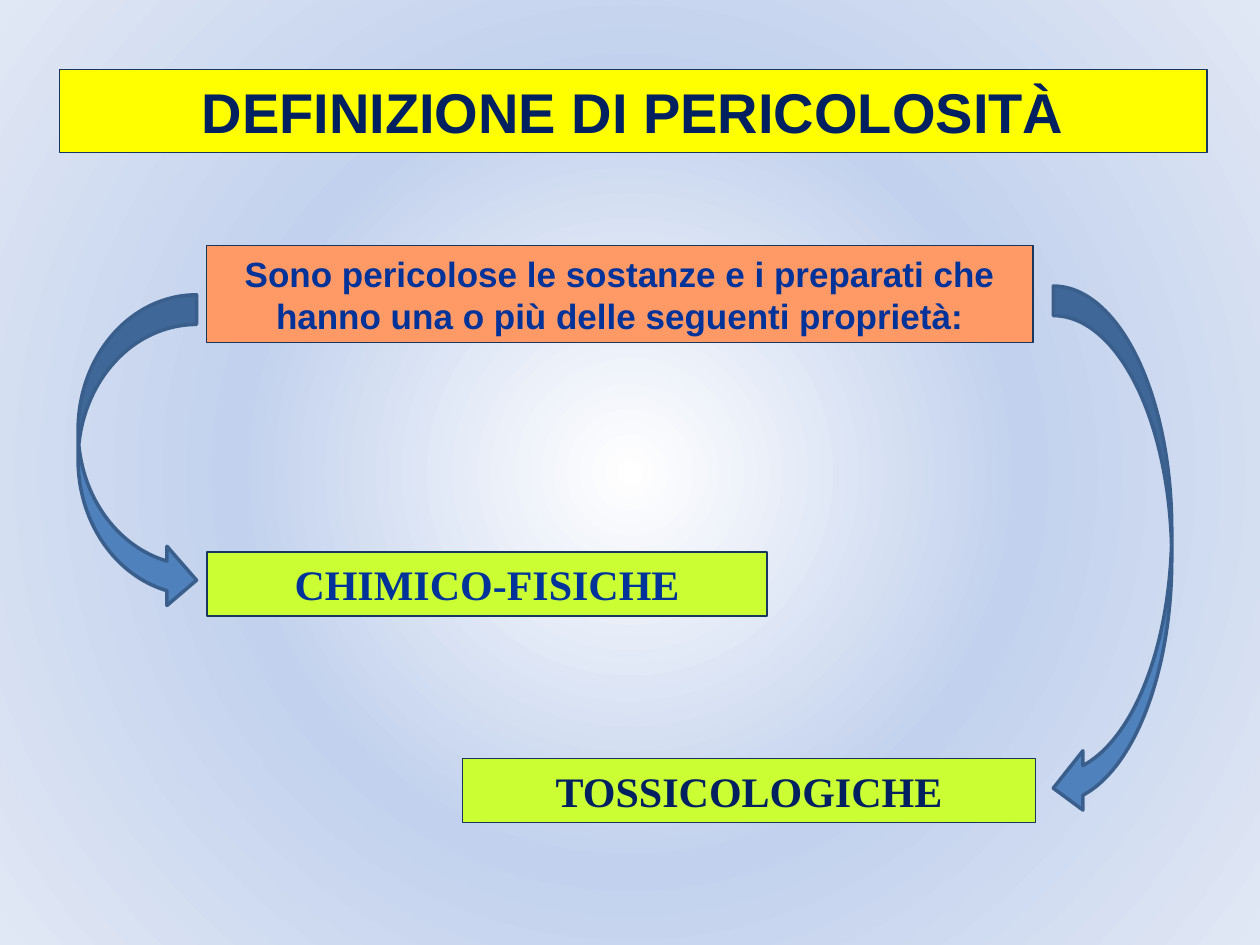
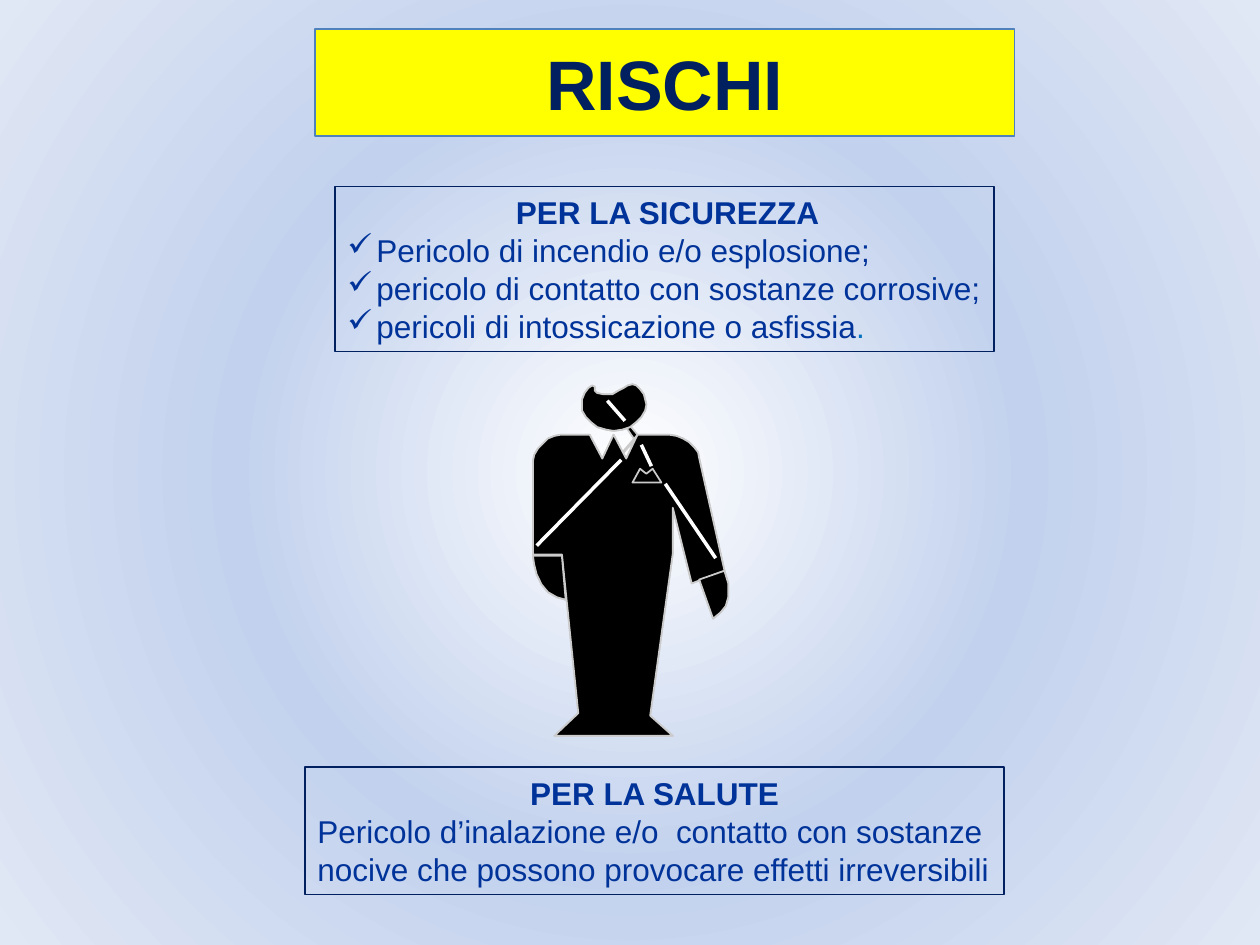
from dataclasses import dataclass
from typing import Any

from lxml import etree
from pptx import Presentation, util as u
from pptx.dml import color
from pptx.enum import shapes, text
from pptx.oxml import ns, parse_xml

PX = 9144  # EMU in one px, 100 px to the inch

COLOURS = {
    "white": "FFFFFF",
    "black": "000000",
    "mid_sky": "C2D1ED",
    "pale_sky": "E1E8F5",
    "yellow": "FFFF00",
    "orange": "FF9966",
    "lime": "CCFF33",
    "navy": "002060",
    "royal": "003399",
    "bright": "0070C0",
    "border": "17375E",
    "accent": "4F81BD",
    "arrow_edge": "3A5F8C",
    "grey": "CBCBCB",
}
BACKDROP = [(0, "white"), (50, "mid_sky"), (100, "pale_sky")]
BULLET_INDENT = 23
CENTRE, LEFT = text.PP_ALIGN.CENTER, text.PP_ALIGN.LEFT
RECTANGLE = shapes.MSO_SHAPE.RECTANGLE

Point = tuple[int, int]


@dataclass(frozen=True)
class Span:
    words: str
    colour: str = "royal"
    bold: bool = False


@dataclass(frozen=True)
class Para:
    spans: list[Span]
    align: Any = LEFT
    bullet: str = ""


@dataclass(frozen=True)
class Panel:
    area: tuple[int, int, int, int]
    paras: list[Para]
    size: int
    fill: str | None = None
    line: str = "border"
    weight: float = 0.75
    font: str = "Arial"
    right_inset: int = 10


@dataclass(frozen=True)
class Arrow:
    preset: Any
    area: tuple[int, int, int, int]


def heading(words: str, colour: str = "royal") -> Para:
    return Para([Span(words, colour, True)], CENTRE)


def title(words: str, area: tuple[int, int, int, int], size: int, line: str) -> Panel:
    return Panel(area, [heading(words, "navy")], size, "yellow", line)


# Slide 1: definition of hazard
DEFINITION = [
    title("DEFINIZIONE DI PERICOLOSITÀ", (47, 55, 911, 66), 32, "border"),
    Panel((164, 195, 656, 77), [heading(
        "Sono pericolose le sostanze e i preparati che hanno una o più "
        "delle seguenti proprietà:")], 20, "orange"),
    Panel((164, 438, 445, 51), [heading("CHIMICO-FISICHE")], 24, "lime",
          weight=1, font="Times New Roman"),
    Panel((367, 602, 455, 51), [heading("TOSSICOLOGICHE", "navy")], 24, "lime",
          font="Times New Roman"),
]
ARROWS = [
    Arrow(shapes.MSO_SHAPE.CURVED_RIGHT_ARROW, (62, 234, 94, 250)),
    Arrow(shapes.MSO_SHAPE.CURVED_LEFT_ARROW, (836, 227, 94, 422)),
]

# Slide 2: risks
RISKS = [
    title("RISCHI", (250, 23, 555, 85), 40, "accent"),
    Panel((266, 148, 523, 131), [
        heading("PER LA SICUREZZA"),
        Para([Span("Pericolo di incendio e/o esplosione;")], bullet="✓"),
        Para([Span("pericolo di contatto con sostanze corrosive;")], bullet="✓"),
        Para([Span("pericoli di intossicazione o asfissia"), Span(".", "bright")],
             bullet="✓"),
    ], 18, line="navy", weight=1, right_inset=5),
    Panel((242, 609, 555, 101), [
        heading("PER LA SALUTE"),
        Para([Span("Pericolo d’inalazione e/o  contatto con sostanze nocive "
                   "che possono provocare effetti irreversibili")]),
    ], 18, line="navy", weight=1),
]

# Parts of the human figure
HEAD: list[Point] = [
    (479, 313), (486, 313), (491, 310), (495, 308), (498, 306), (502, 305),
    (505, 306), (508, 309), (511, 313), (512, 317), (513, 321), (512, 326),
    (509, 331), (505, 335), (500, 339), (494, 341), (487, 342), (481, 341),
    (474, 339), (469, 335), (465, 331), (462, 326), (462, 317), (464, 312),
    (467, 308), (470, 306), (472, 307), (472, 310), (474, 312),
]
SUIT: list[Point] = [
    (506, 345), (497, 364), (487, 345), (478, 364), (468, 345), (445, 345),
    (440, 346), (435, 348), (431, 352), (427, 356), (424, 361), (423, 366),
    (423, 440), (446, 440), (459, 566), (440, 584), (534, 584), (516, 568),
    (534, 439), (534, 403), (549, 463), (575, 453), (555, 364), (554, 359),
    (551, 355), (547, 351), (542, 348), (537, 346), (531, 345),
]
LEFT_HAND: list[Point] = [
    (423, 441), (446, 441), (449, 476), (442, 474), (435, 470), (430, 464),
    (426, 456), (424, 448),
]
RIGHT_HAND: list[Point] = [
    (575, 453), (555, 460), (566, 491), (572, 486), (576, 481), (578, 474),
    (578, 463),
]
POCKET: list[Point] = [(525, 383), (518, 372), (513, 376), (508, 372), (502, 383)]
SILHOUETTE = (HEAD + HEAD[:1] + SUIT + SUIT[:1] + LEFT_HAND + LEFT_HAND[:1]
              + [(504, 349)] + RIGHT_HAND + RIGHT_HAND[:1])
CREASES: list[tuple[Point, Point]] = [
    ((493, 365), (426, 433)),
    ((528, 384), (568, 443)),
    ((482, 318), (496, 334)),
    ((509, 353), (517, 370)),
]


def assign(target: Any, values: dict[str, Any]) -> None:
    for name, value in values.items():
        setattr(target, name, value)


def rgb(name: str) -> color.RGBColor:
    return color.RGBColor.from_string(COLOURS[name])


def px(*lengths: int) -> list[int]:
    return [length * PX for length in lengths]


def paint(box: Any, fill: str | None, line: str, weight: float) -> None:
    box.shadow.inherit = False
    if fill:
        box.fill.solid()
        box.fill.fore_color.rgb = rgb(fill)
    else:
        box.fill.background()
    box.line.color.rgb = rgb(line)
    box.line.width = u.Pt(weight)


def add_page(deck: Any) -> Any:
    page = deck.slides.add_slide(deck.slide_layouts[6])
    # Radial backdrop
    page.background.fill.solid()
    solid = next(page.element.iter(ns.qn("a:solidFill")))
    stops = "".join(
        f'<a:gs pos="{share * 1000}"><a:srgbClr val="{COLOURS[name]}"/></a:gs>'
        for share, name in BACKDROP)
    solid.getparent().replace(solid, parse_xml(
        f'<a:gradFill {ns.nsdecls("a")} rotWithShape="1"><a:gsLst>{stops}</a:gsLst>'
        '<a:path path="circle"><a:fillToRect l="50000" t="50000" r="50000" '
        'b="50000"/></a:path></a:gradFill>'))
    return page


def set_bullet(para: Any, symbol: str) -> None:
    layout = para._p.get_or_add_pPr()
    layout.set("marL", str(BULLET_INDENT * PX))
    layout.set("indent", str(-BULLET_INDENT * PX))
    etree.SubElement(layout, ns.qn("a:buChar")).set("char", symbol)


def draw_panel(page: Any, panel: Panel) -> None:
    box = page.shapes.add_shape(RECTANGLE, *px(*panel.area))
    paint(box, panel.fill, panel.line, panel.weight)
    frame = box.text_frame
    assign(frame, {
        "word_wrap": True,
        "vertical_anchor": text.MSO_ANCHOR.MIDDLE,
        "margin_left": 10 * PX,
        "margin_right": panel.right_inset * PX,
        "margin_top": 5 * PX,
        "margin_bottom": 5 * PX,
    })
    for index, item in enumerate(panel.paras):
        para = frame.add_paragraph() if index else frame.paragraphs[0]
        para.alignment = item.align
        if item.bullet:
            set_bullet(para, item.bullet)
        for part in item.spans:
            span = para.add_run()
            span.text = part.words
            assign(span.font, {"name": panel.font, "size": u.Pt(panel.size),
                               "bold": part.bold})
            span.font.color.rgb = rgb(part.colour)


def draw_arrow(page: Any, arrow: Arrow) -> None:
    box = page.shapes.add_shape(arrow.preset, *px(*arrow.area))
    paint(box, "accent", "arrow_edge", 2)


def draw_figure(page: Any) -> None:
    figure = page.shapes.add_group_shape()
    for outline in (SILHOUETTE, HEAD, SUIT, LEFT_HAND, RIGHT_HAND, POCKET):
        builder = figure.shapes.build_freeform(*outline[0], scale=PX)
        builder.add_line_segments(outline[1:], close=True)
        paint(builder.convert_to_shape(), "black", "grey", 1)
    for start, end in CREASES:
        crease = figure.shapes.add_connector(
            shapes.MSO_CONNECTOR.STRAIGHT, *px(*start, *end))
        crease.line.color.rgb = rgb("white")
        crease.line.width = u.Pt(2)
        etree.SubElement(crease._element.spPr, ns.qn("a:effectLst"))


def main() -> None:
    deck = Presentation()
    assign(deck, {"slide_width": 1000 * PX, "slide_height": 750 * PX})

    page = add_page(deck)
    for panel in DEFINITION:
        draw_panel(page, panel)
    for arrow in ARROWS:
        draw_arrow(page, arrow)

    page = add_page(deck)
    draw_figure(page)
    for panel in RISKS:
        draw_panel(page, panel)

    deck.save("out.pptx")


if __name__ == "__main__":
    main()
